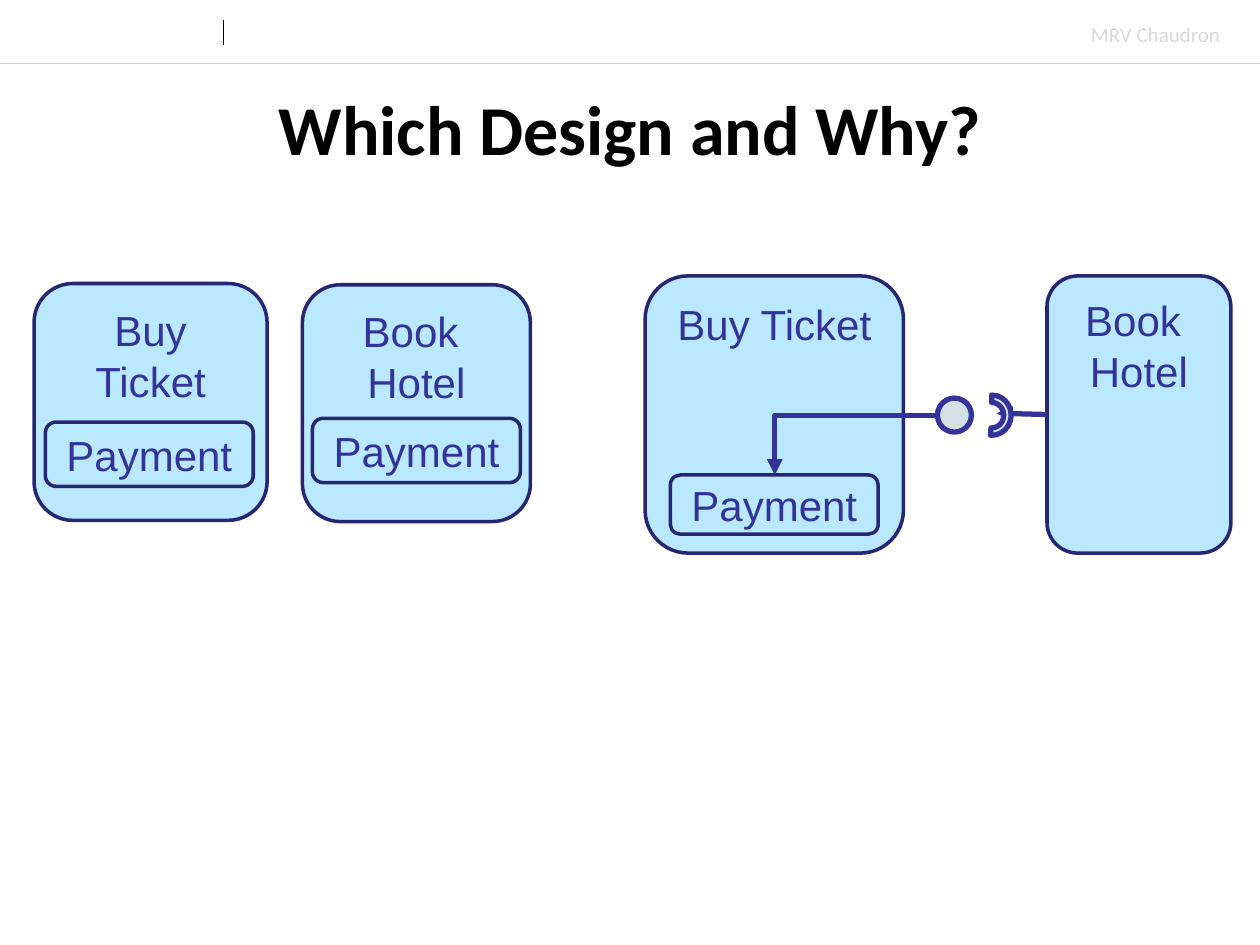
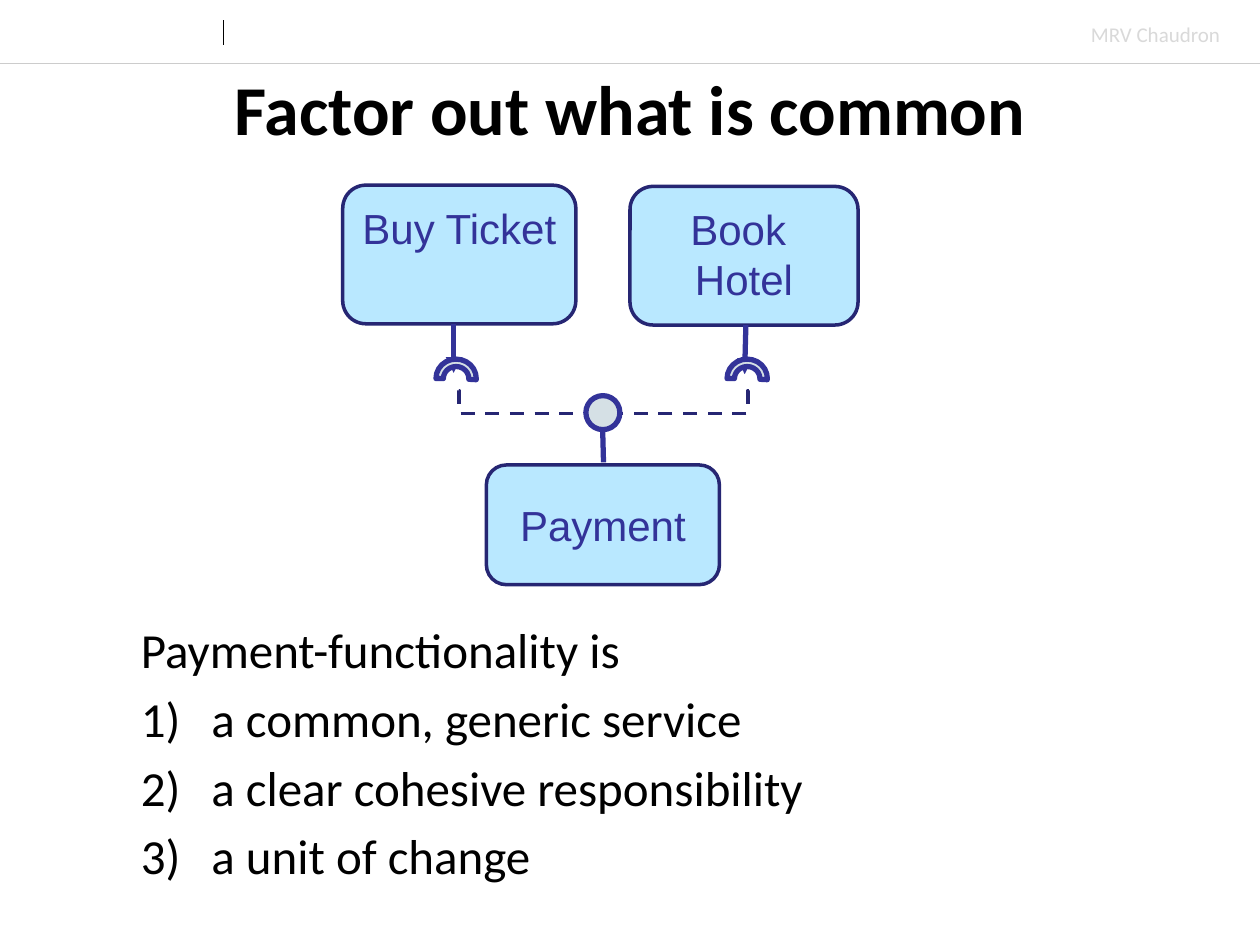
import pptx
import pptx.dml.color
import pptx.enum.dml
import pptx.enum.shapes
import pptx.enum.text
import pptx.oxml
import pptx.oxml.ns
import pptx.util
import lxml.etree

COLORS = {
    "box": "B9E8FF",
    "border": "262673",
    "ink": "333399",
    "port": "D5E0E5",
    "rule": "CCCCCC",
    "author": "D9D9D9",
    "black": "000000",
}
RGB = {name: pptx.dml.color.RGBColor.from_string(code) for name, code in COLORS.items()}
SHAPES = pptx.enum.shapes.MSO_SHAPE
CONNECTORS = pptx.enum.shapes.MSO_CONNECTOR
ALIGN = pptx.enum.text.PP_ALIGN
ANCHOR = pptx.enum.text.MSO_ANCHOR
qn = pptx.oxml.ns.qn

presentation = pptx.Presentation()
presentation.slide_width = pptx.util.Inches(10)
presentation.slide_height = pptx.util.Inches(7.5)
COLUMN = presentation.slide_width / 100
ROW = presentation.slide_height / 75


def grid(*values):
    return [int(value * (ROW if index % 2 else COLUMN)) for index, value in enumerate(values)]


def write(text, frame, size=24, font="Arial", color="ink", bold=False,
          align=ALIGN.CENTER, anchor=ANCHOR.TOP, wrap=True, numbered=False):
    frame.word_wrap = wrap
    frame.vertical_anchor = anchor
    paragraph = frame.paragraphs[0]
    if frame.text:
        paragraph = frame.add_paragraph()
        paragraph.space_before = pptx.util.Pt(size * 0.2)
    paragraph.alignment = align
    if numbered:
        properties = paragraph._p.get_or_add_pPr()
        indent = int(5.6 * COLUMN)
        properties.set("marL", str(indent))
        properties.set("indent", str(-indent))
        lxml.etree.SubElement(properties, qn("a:buAutoNum"), type="arabicParenR")
    paragraph.text = text
    for run in paragraph.runs:
        run.font.size = pptx.util.Pt(size)
        run.font.name = font
        run.font.bold = bold
        run.font.color.rgb = RGB[color]


HEADER_LINES = [
    dict(ends=(0, 5, 100, 5), color="rule", width=0.25),
    dict(ends=(17.7, 1.6, 17.7, 3.6), color="black", width=0.5),
]
ARROW = dict(color="ink", width=3, arrow=True)
DASHED = dict(color="border", width=2, dashed=True, bend=("bentConnector3", 200))

SLIDES = [
    dict(
        title="Which Design and Why?",
        title_row=6,
        boxes=[
            ("Buy Ticket", 2.7, 22.5, 18.5, 18.8),
            ("Payment", 3.6, 33.5, 16.5, 5.1),
            ("Book \vHotel", 24, 22.6, 18.1, 18.8),
            ("Payment", 24.8, 33.2, 16.5, 5.1),
            ("Buy Ticket", 51.2, 21.9, 20.5, 22),
            ("Payment", 53.2, 37.7, 16.5, 4.7),
            ("Book \vHotel", 83.1, 21.9, 14.6, 22),
        ],
        lines=[
            dict(ARROW, ends=(83.1, 32.9, 79.1, 32.8)),
            dict(ARROW, ends=(71.6, 33, 75.6, 33)),
            dict(ARROW, ends=(71.7, 33, 61.5, 37.7), bend=("bentConnector4", -24400, -1000)),
        ],
        balls=[(74.4, 31.6, 0)],
        sockets=[(77.1, 31.4, 90)],
        points=[],
    ),
    dict(
        title="Factor out what is common",
        title_row=4.4,
        boxes=[
            ("Buy Ticket", 27.2, 14.7, 18.5, 11),
            ("Book \vHotel", 50, 14.8, 18.1, 11),
            ("Payment", 38.6, 36.9, 18.5, 9.5),
        ],
        lines=[
            dict(ARROW, ends=(47.9, 36.7, 47.8, 32.8)),
            dict(ARROW, ends=(36, 25.7, 36, 29.6)),
            dict(ARROW, ends=(59.2, 25.8, 59.1, 29.7)),
            dict(DASHED, ends=(36.4, 31, 46.5, 32.8)),
            dict(DASHED, ends=(59.4, 31, 49.4, 32.8)),
        ],
        balls=[(46.5, 31.4, 270)],
        sockets=[(34.6, 28.5, 0), (57.7, 28.5, 0)],
        points=[
            "Payment-functionality is",
            "a common, generic service",
            "a clear cohesive responsibility",
            "a unit of change",
        ],
    ),
]

for content in SLIDES:
    slide = presentation.slides.add_slide(presentation.slide_layouts[6])
    author = slide.shapes.add_textbox(*grid(85.6, 1.2, 12.3, 3))
    write("MRV Chaudron", author.text_frame, size=12, font="Calibri", color="author",
          align=ALIGN.LEFT, wrap=False)
    title = slide.shapes.add_textbox(*grid(0, content["title_row"], 100, 8.3))
    write(content["title"], title.text_frame, size=40, font="Calibri", color="black",
          bold=True, anchor=ANCHOR.MIDDLE)

    for label, *place in content["boxes"]:
        box = slide.shapes.add_shape(SHAPES.ROUNDED_RECTANGLE, *grid(*place))
        box.shadow.inherit = False
        box.fill.solid()
        box.fill.fore_color.rgb = RGB["box"]
        box.line.color.rgb = RGB["border"]
        box.line.width = pptx.util.Pt(2)
        frame = box.text_frame
        frame.margin_left = frame.margin_right = int(0.8 * COLUMN)
        frame.margin_top = frame.margin_bottom = int(0.8 * ROW)
        write(label, frame, anchor=ANCHOR.MIDDLE if label == "Payment" else ANCHOR.TOP)

    for line in HEADER_LINES + content["lines"]:
        kind = CONNECTORS.ELBOW if "bend" in line else CONNECTORS.STRAIGHT
        connector = slide.shapes.add_connector(kind, *grid(*line["ends"]))
        connector.line.color.rgb = RGB[line["color"]]
        connector.line.width = pptx.util.Pt(line["width"])
        if "dashed" in line:
            connector.line.dash_style = pptx.enum.dml.MSO_LINE.DASH
        properties = connector._element.spPr
        if "arrow" in line:
            lxml.etree.SubElement(properties.find(qn("a:ln")), qn("a:tailEnd"), type="triangle")
        if "bend" in line:
            preset, *bends = line["bend"]
            geometry = properties.find(qn("a:prstGeom"))
            geometry.set("prst", preset)
            guides = geometry.find(qn("a:avLst"))
            for number, bend in enumerate(bends, 1):
                lxml.etree.SubElement(guides, qn("a:gd"), name=f"adj{number}", fmla=f"val {bend}")
        lxml.etree.SubElement(properties, qn("a:effectLst"))

    ports = [(SHAPES.OVAL, 2.7, 2.7, port) for port in content["balls"]]
    ports += [(SHAPES.BLOCK_ARC, 3.2, 3.1, port) for port in content["sockets"]]
    for kind, width, height, (left, top, rotation) in ports:
        port = slide.shapes.add_shape(kind, *grid(left, top, width, height))
        port.rotation = rotation
        port.shadow.inherit = False
        port.fill.solid()
        port.fill.fore_color.rgb = RGB["port"]
        port.line.color.rgb = RGB["ink"]
        port.line.width = pptx.util.Pt(3)
        if kind == SHAPES.BLOCK_ARC:
            for index, value in enumerate((108, 1.83, 0.19)):
                port.adjustments[index] = value

    if content["points"]:
        body = slide.shapes.add_textbox(*grid(10.2, 48.7, 93.7 - 10.2, 22.5))
        for index, point in enumerate(content["points"]):
            write(point, body.text_frame, size=28, font="Calibri", color="black",
                  align=ALIGN.LEFT, numbered=index > 0)

presentation.save("out.pptx")
